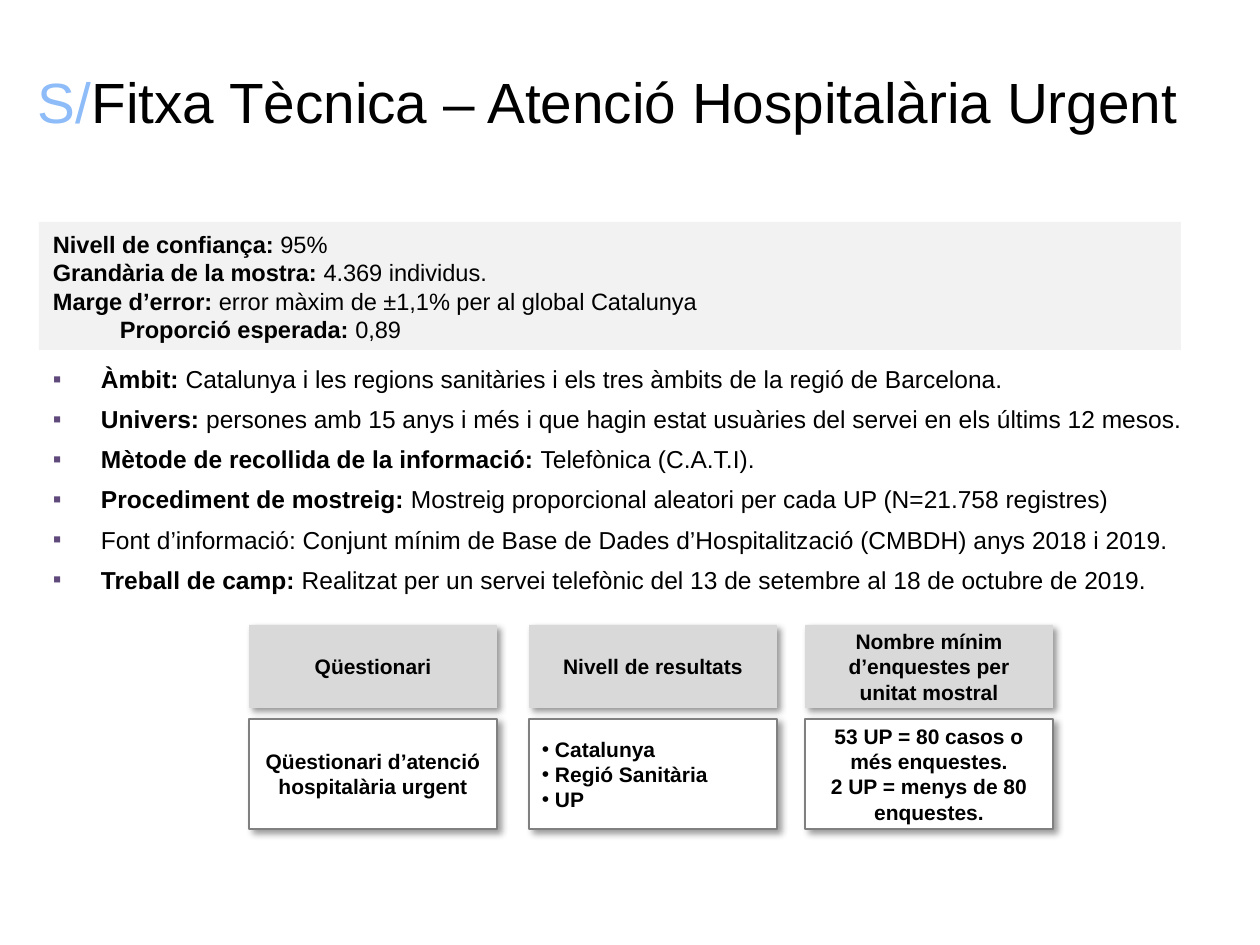
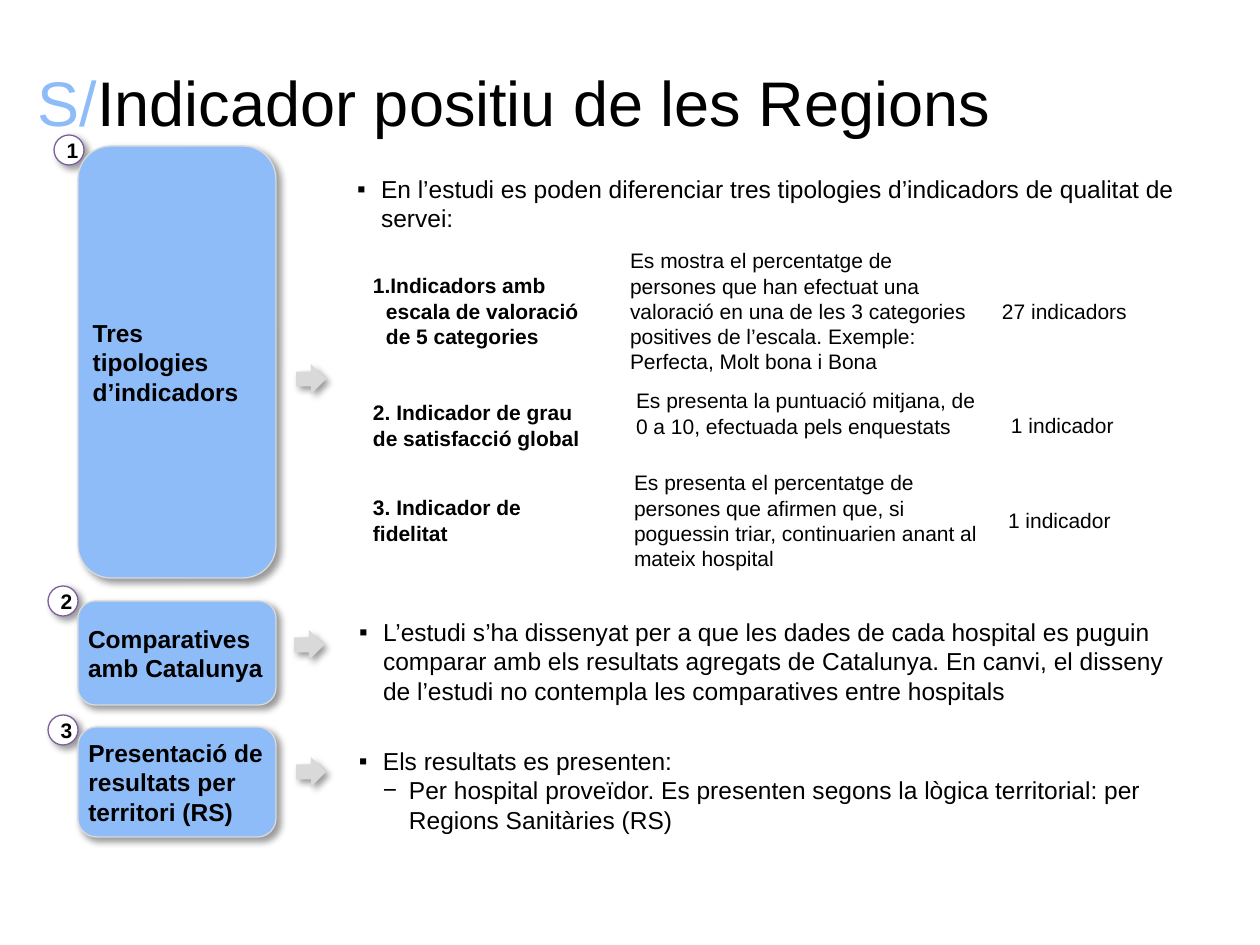
from dataclasses import dataclass

import lxml.etree
import pptx
import pptx.dml.color
import pptx.enum.shapes
import pptx.enum.text
import pptx.oxml.ns
import pptx.util

SCALE = 914400 / 126
FONT = "Arial"
COLOURS = {
    "black": "000000", "white": "FFFFFF", "blue": "8EBCF9", "band": "F2F2F2",
    "grey": "D9D9D9", "edge": "808080", "violet": "7C5F9F", "marker": "60497B",
}
KINDS = pptx.enum.shapes.MSO_SHAPE
ALIGN = pptx.enum.text.PP_ALIGN
ANCHOR = pptx.enum.text.MSO_ANCHOR
LEFT, CENTRE = ALIGN.LEFT, ALIGN.CENTER


@dataclass(frozen=True)
class Area:
    """Place and size in px."""
    left: int
    top: int
    width: int
    height: int


@dataclass(frozen=True)
class Look:
    """Preset shape with its fill, outline and shadow."""
    kind: int
    fill: str
    line: str = ""
    shadow: bool = True


@dataclass(frozen=True)
class Line:
    """Paragraph of a bold lead and a regular rest."""
    lead: str = ""
    rest: str = ""
    bullet: str = ""
    marker: str = "black"
    margin: int = 0
    hang: int = 0


@dataclass(frozen=True)
class Style:
    """Text settings of a whole box."""
    size: float
    align: int = LEFT
    anchor: int = ANCHOR.TOP
    insets: tuple[int, int] = (13, 6)
    spacing: float = 1
    before: float = 0


@dataclass(frozen=True)
class Column:
    """Heading box with a detail box under it."""
    left: int
    heading: str
    details: list[Line]
    align: int = CENTRE


@dataclass(frozen=True)
class Step:
    """Numbered blue box with its arrow."""
    label: str
    box: Area
    badge: tuple[int, int]
    arrow: tuple[int, int]


@dataclass(frozen=True)
class Indicator:
    """Row with the name, meaning and count of an indicator type."""
    name: Line
    name_top: int
    meaning: str
    meaning_at: tuple[int, int]
    count: str
    count_at: tuple[int, int]


BAND = Look(KINDS.RECTANGLE, "band", shadow=False)
HEADING = Look(KINDS.RECTANGLE, "grey")
DETAIL = Look(KINDS.RECTANGLE, "white", "edge")
BADGE = Look(KINDS.OVAL, "white", "violet")
STEP = Look(KINDS.ROUNDED_RECTANGLE, "blue", "grey")
ARROW = Look(KINDS.RIGHT_ARROW, "grey")
SMALL = Style(12)
BODY = Style(14)

FACTS = [
    Line("Nivell de confiança: ", "95%"),
    Line("Grandària de la mostra: ", "4.369 individus."),
    Line("Marge d’error: ", "error màxim de ±1,1% per al global Catalunya"),
    Line("Proporció esperada: ", "0,89", margin=67),
]
METHOD = [
    ("Àmbit: ", "Catalunya i les regions sanitàries i els tres àmbits de la regió de Barcelona."),
    ("Univers: ", "persones amb 15 anys i més i que hagin estat usuàries del servei "
                  "en els últims 12 mesos."),
    ("Mètode de recollida de la informació: ", "Telefònica (C.A.T.I)."),
    ("Procediment de mostreig: ",
     "Mostreig proporcional aleatori per cada UP (N=21.758 registres)"),
    ("", "Font d’informació: Conjunt mínim de Base de Dades d’Hospitalització (CMBDH) "
         "anys 2018 i 2019."),
    ("Treball de camp: ",
     "Realitzat per un servei telefònic del 13 de setembre al 18 de octubre de 2019."),
]
COLUMNS = [
    Column(249, "Qüestionari", [Line("Qüestionari d’atenció hospitalària urgent")]),
    Column(529, "Nivell de resultats",
           [Line(level, bullet="•", margin=13, hang=13)
            for level in ("Catalunya", "Regió Sanitària", "UP")], LEFT),
    Column(805, "Nombre mínim d’enquestes per unitat mostral",
           [Line("53 UP = 80 casos o més enquestes."), Line("2 UP = menys de 80 enquestes.")]),
]
STEPS = [
    Step("Tres tipologies d’indicadors", Area(78, 146, 198, 432), (54, 135), (296, 364)),
    Step("Comparatives amb Catalunya", Area(78, 601, 198, 104), (48, 586), (294, 630)),
    Step("Presentació de resultats per territori (RS)", Area(78, 727, 198, 110),
         (48, 715), (296, 757)),
]
INDICATORS = [
    Indicator(Line("Indicadors amb escala de valoració de 5 categories", bullet="1.",
                   margin=13, hang=13), 267,
              "Es mostra el percentatge de persones que han efectuat una valoració en una de "
              "les 3 categories positives de l’escala. Exemple: Perfecta, Molt bona i Bona",
              (617, 242), "27 indicadors", (989, 293)),
    Indicator(Line("2. Indicador de grau de satisfacció global"), 394,
              "Es presenta la puntuació mitjana, de 0 a 10, efectuada pels enquestats",
              (623, 382), "1 indicador", (998, 407)),
    Indicator(Line("3. Indicador de fidelitat"), 489,
              "Es presenta el percentatge de persones que afirmen que, si poguessin triar, "
              "continuarien anant al mateix hospital",
              (621, 464), "1 indicador", (995, 502)),
]
SQUARE = {"bullet": "▪", "margin": 24, "hang": 24}
COMMENTS = [
    (Area(344, 168, 903, 131),
     [Line(rest="En l’estudi es poden diferenciar tres tipologies d’indicadors de qualitat "
                "de servei:", **SQUARE)]),
    (Area(346, 611, 849, 102),
     [Line(rest="L’estudi s’ha dissenyat per a que les dades de cada hospital es puguin "
                "comparar amb els resultats agregats de Catalunya. En canvi, el disseny de "
                "l’estudi no contempla les comparatives entre hospitals", **SQUARE)]),
    (Area(346, 740, 830, 102),
     [Line(rest="Els resultats es presenten:", **SQUARE),
      Line(rest="Per hospital proveïdor. Es presenten segons la lògica territorial: per "
                "Regions Sanitàries (RS)", bullet="−", margin=50, hang=26)]),
]


def px(length: float) -> int:
    """Turn px into EMU."""
    return pptx.util.Emu(round(length * SCALE))


def rgb(name: str) -> pptx.dml.color.RGBColor:
    """Look up a named colour."""
    return pptx.dml.color.RGBColor.from_string(COLOURS[name])


def add_child(parent, tag: str, **attributes: object):
    """Append a DrawingML element."""
    values = {key: str(value) for key, value in attributes.items()}
    return lxml.etree.SubElement(parent, pptx.oxml.ns.qn(f"a:{tag}"), values)


def set_bullet(para, line: Line) -> None:
    """Give a paragraph its indent and bullet."""
    props = para._p.get_or_add_pPr()
    props.set("marL", str(px(line.margin)))
    props.set("indent", str(-px(line.hang)))
    if not line.bullet:
        return
    add_child(add_child(props, "buClr"), "srgbClr", val=COLOURS[line.marker])
    add_child(props, "buFont", typeface=FONT)
    if line.bullet == "1.":
        add_child(props, "buAutoNum", type="arabicPeriod")
    else:
        add_child(props, "buChar", char=line.bullet)


def format_span(span, size: float, bold: bool, colour: str = "black") -> None:
    """Set the font of one run."""
    span.font.name = FONT
    span.font.size = pptx.util.Pt(size)
    span.font.bold = bold
    span.font.color.rgb = rgb(colour)


def write(shape, lines: list[Line], style: Style) -> None:
    """Fill a shape or text box with paragraphs."""
    frame = shape.text_frame
    frame.word_wrap = True
    frame.vertical_anchor = style.anchor
    frame.margin_left = frame.margin_right = px(style.insets[0])
    frame.margin_top = frame.margin_bottom = px(style.insets[1])
    for index, line in enumerate(lines):
        para = frame.add_paragraph() if index else frame.paragraphs[0]
        set_bullet(para, line)
        para.alignment = style.align
        para.line_spacing = style.spacing
        para.space_before = pptx.util.Pt(style.before if index else 0)
        para.text = line.lead or line.rest
        format_span(para.runs[0], style.size, bool(line.lead))
        if line.lead and line.rest:
            span = para.add_run()
            span.text = line.rest
            format_span(span, style.size, False)


def add_box(page, area: Area, lines: list[Line], style: Style):
    """Add a text box."""
    box = page.shapes.add_textbox(px(area.left), px(area.top), px(area.width), px(area.height))
    write(box, lines, style)
    return box


def add_shape(page, area: Area, look: Look):
    """Add a preset shape in the given look."""
    shape = page.shapes.add_shape(
        look.kind, px(area.left), px(area.top), px(area.width), px(area.height))
    shape.fill.solid()
    shape.fill.fore_color.rgb = rgb(look.fill)
    if look.line:
        shape.line.color.rgb = rgb(look.line)
        shape.line.width = pptx.util.Pt(0.75)
    else:
        shape.line.fill.background()
    shape.shadow.inherit = False
    if look.shadow:
        effects = shape._element.spPr.find(pptx.oxml.ns.qn("a:effectLst"))
        outer = add_child(effects, "outerShdw", blurRad=pptx.util.Pt(4), dist=pptx.util.Pt(3),
                          dir=45 * 60000, algn="tl", rotWithShape=0)
        add_child(add_child(outer, "srgbClr", val=COLOURS["black"]), "alpha", val=40000)
    return shape


def add_page(deck, title: str, size: float):
    """Add a blank page with the shared title."""
    page = deck.slides.add_slide(deck.slide_layouts[6])
    box = add_box(page, Area(25, 29, 1211, 144), [Line(rest="S/")],
                  Style(size, anchor=ANCHOR.MIDDLE))
    para = box.text_frame.paragraphs[0]
    para.runs[0].font.color.rgb = rgb("blue")
    span = para.add_run()
    span.text = title
    format_span(span, size, False)
    return page


def build_fact_sheet(deck) -> None:
    """Build the technical sheet."""
    page = add_page(deck, "Fitxa Tècnica – Atenció Hospitalària Urgent", 32.4)
    band = add_shape(page, Area(39, 222, 1142, 128), BAND)
    write(band, FACTS, Style(13.5, insets=(14, 8)))
    points = [Line(lead, rest, "▪", "marker", 48, 48) for lead, rest in METHOD]
    add_box(page, Area(39, 350, 1166, 299), points,
            Style(14, ALIGN.JUSTIFY, insets=(14, 8), spacing=1.2, before=2.8))
    for column in COLUMNS:
        heading = add_shape(page, Area(column.left, 625, 248, 83), HEADING)
        write(heading, [Line(column.heading)], Style(12, CENTRE, ANCHOR.MIDDLE))
        detail = add_shape(page, Area(column.left, 719, 248, 110), DETAIL)
        write(detail, column.details, Style(12, column.align, ANCHOR.MIDDLE))


def build_regions(deck) -> None:
    """Build the page on the positive indicator."""
    page = add_page(deck, "Indicador positiu de les Regions", 36)
    for number, (step, (area, lines)) in enumerate(zip(STEPS, COMMENTS), 1):
        badge = add_shape(page, Area(*step.badge, 30, 30), BADGE)
        write(badge, [Line(str(number))], Style(12, CENTRE, ANCHOR.MIDDLE))
        box = add_shape(page, step.box, STEP)
        write(box, [Line(step.label)], Style(14, anchor=ANCHOR.MIDDLE, insets=(5, 6)))
        add_shape(page, Area(*step.arrow, 30, 30), ARROW)
        add_box(page, area, lines, BODY)
    for row in INDICATORS:
        add_box(page, Area(360, row.name_top, 248, 63), [row.name], SMALL)
        add_box(page, Area(*row.meaning_at, 374, 115), [Line(rest=row.meaning)], SMALL)
        add_box(page, Area(*row.count_at, 258, 38), [Line(rest=row.count)], SMALL)


def main() -> None:
    """Build and save the deck."""
    deck = pptx.Presentation()
    deck.slide_width, deck.slide_height = px(1260), px(945)
    build_fact_sheet(deck)
    build_regions(deck)
    deck.save("out.pptx")


if __name__ == "__main__":
    main()
